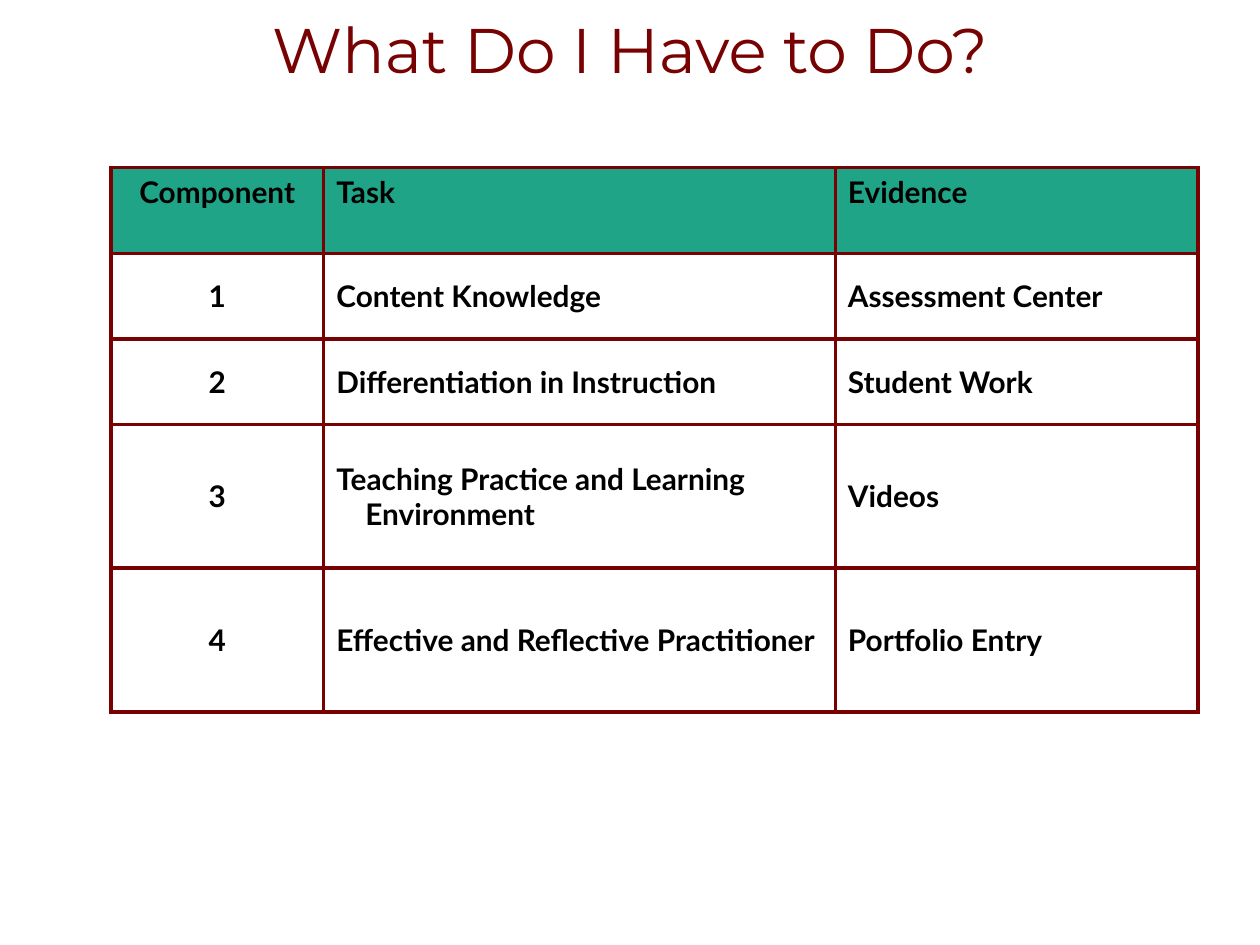
from typing import NamedTuple

from lxml.etree import SubElement
from pptx import Presentation
from pptx.dml.color import RGBColor
from pptx.enum.text import MSO_ANCHOR as Anchor, PP_ALIGN as Align
from pptx.oxml.ns import qn
from pptx.util import Inches, Pt

MAROON, GREEN, BLACK = "780101", "1FA488", "000000"
COLUMN_WIDTHS = (1.69, 4.06, 2.88)
ROW_HEIGHTS = (0.68, 0.68, 0.68, 1.14, 1.14)


class Row(NamedTuple):
    component: str
    task: str
    evidence: str


ROWS = (
    Row("Component", "Task", "Evidence"),
    Row("1", "Content Knowledge", "Assessment Center"),
    Row("2", "Differentiation in Instruction", "Student Work"),
    Row("3", "Teaching Practice and Learning Environment", "Videos"),
    Row("4", "Effective and Reflective Practitioner", "Portfolio Entry"),
)


def color(value: str) -> RGBColor:
    return RGBColor.from_string(value)


def style_text(p, font: str, size: float, hue: str, bold: bool, align) -> None:
    p.alignment = align
    for r in p.runs:
        r.font.name, r.font.size, r.font.bold = font, Pt(size), bold
        r.font.color.rgb = color(hue)


def add_borders(cell, hue: str, width: float) -> None:
    tc_pr = cell._tc.get_or_add_tcPr()
    for side in ("a:lnL", "a:lnR", "a:lnT", "a:lnB"):
        line = SubElement(tc_pr, qn(side), w=str(Pt(width)))
        fill = SubElement(line, qn("a:solidFill"))
        SubElement(fill, qn("a:srgbClr"), val=hue)


def fill_cell(cell, text: str, header: bool, centered: bool) -> None:
    add_borders(cell, MAROON, 2.25)
    if header:
        cell.fill.solid()
        cell.fill.fore_color.rgb = color(GREEN)
    else:
        cell.fill.background()
    cell.vertical_anchor = Anchor.TOP if header else Anchor.MIDDLE
    cell.text_frame.text = text
    p = cell.text_frame.paragraphs[0]
    if not centered:
        # Hanging indent for wrapped lines
        p_pr = p._p.get_or_add_pPr()
        p_pr.set("marL", str(Inches(0.23)))
        p_pr.set("indent", str(-Inches(0.23)))
    style_text(p, "Lato", 17, BLACK, True, Align.CENTER if centered else Align.LEFT)


def add_title(s, text: str) -> None:
    title = s.shapes.title
    title.left, title.top = Inches(0.5), Inches(0.03)
    title.width, title.height = Inches(9), Inches(0.92)
    tf = title.text_frame
    tf.text = text
    tf.word_wrap = True
    tf.vertical_anchor = Anchor.TOP
    style_text(tf.paragraphs[0], "Montserrat", 36, MAROON, False, Align.CENTER)


def add_task_table(s) -> None:
    frame = s.shapes.add_table(
        len(ROWS), len(COLUMN_WIDTHS), Inches(0.88), Inches(1.33),
        Inches(sum(COLUMN_WIDTHS)), Inches(sum(ROW_HEIGHTS)))
    table = frame.table
    table.first_row = table.horz_banding = False
    for column, width in zip(table.columns, COLUMN_WIDTHS):
        column.width = Inches(width)
    for i, (height, row) in enumerate(zip(ROW_HEIGHTS, ROWS)):
        table.rows[i].height = Inches(height)
        for j, text in enumerate(row):
            fill_cell(table.cell(i, j), text, header=i == 0, centered=j == 0)


def main() -> None:
    prs = Presentation()
    prs.slide_width, prs.slide_height = Inches(10), Inches(7.5)
    s = prs.slides.add_slide(prs.slide_layouts[5])
    add_title(s, "What Do I Have to Do?")
    add_task_table(s)
    prs.save("out.pptx")


if __name__ == "__main__":
    main()
